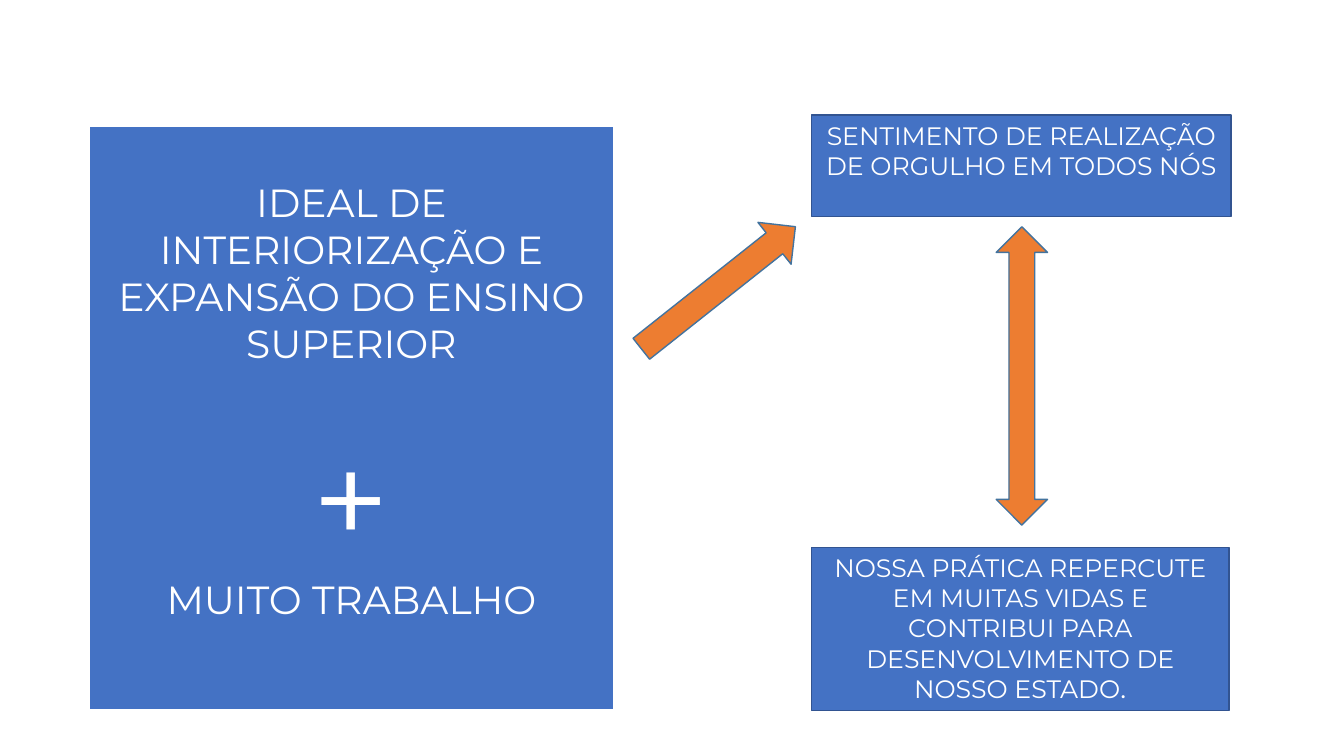
from pptx import Presentation
from pptx.dml.color import RGBColor
from pptx.enum import shapes, text
from pptx.util import Inches, Pt

BLUE = RGBColor(0x44, 0x72, 0xC4)
NAVY = RGBColor(0x32, 0x54, 0x91)
ORANGE = RGBColor(0xED, 0x7D, 0x31)
STEEL = RGBColor(0x43, 0x73, 0x9E)
WHITE = RGBColor(0xFF, 0xFF, 0xFF)
KIND = shapes.MSO_SHAPE


def shape(slide, kind, box, fill, line, width=1):
    item = slide.shapes.add_shape(kind, *[Inches(n) for n in box])
    item.shadow.inherit = False
    item.fill.solid()
    item.fill.fore_color.rgb = fill
    item.line.color.rgb = line
    item.line.width = Pt(width)
    return item


def panel(slide, box, lines, line=NAVY, width=1, top=0.05):
    """Blue box with centred lines, each given as (words, size, space before)."""
    item = shape(slide, KIND.RECTANGLE, box, BLUE, line, width)
    frame = item.text_frame
    frame.word_wrap = True
    frame.vertical_anchor = text.MSO_ANCHOR.TOP
    frame.margin_top = Inches(top)
    for i, (words, size, gap) in enumerate(lines):
        para = frame.add_paragraph() if i else frame.paragraphs[0]
        para.add_run().text = words
        para.alignment = text.PP_ALIGN.CENTER
        para.space_before = Pt(gap)
        para.font.name = "Montserrat"
        para.font.size = Pt(size)
        para.font.color.rgb = WHITE
    return item


def causes(slide, box):
    panel(slide, box, [
        ("IDEAL DE INTERIORIZAÇÃO E EXPANSÃO DO ENSINO SUPERIOR", 28, 0),
        ("+", 96, 34),
        ("MUITO TRABALHO", 28, 0),
    ], WHITE, 1.5, top=0.52)


def effects(slide, box):
    left, top, wide, high = box
    panel(slide, (left, top, wide, 1.01),
          [("SENTIMENTO DE REALIZAÇÃO DE ORGULHO EM TODOS NÓS", 18, 0)])
    low = panel(slide, (left, top + high - 1.62, wide - 0.02, 1.62),
                [("NOSSA PRÁTICA REPERCUTE EM MUITAS VIDAS E CONTRIBUI PARA "
                  "DESENVOLVIMENTO DE NOSSO ESTADO", 18, 0)])
    stop = low.text_frame.paragraphs[0].add_run()
    stop.text = "."
    stop.font.name = "Calibri"
    # Two-way arrow between the boxes
    shape(slide, KIND.UP_DOWN_ARROW,
          (left + wide / 2 - 0.25, top + 1.11, 0.51, 2.96), ORANGE, STEEL)


def main():
    deck = Presentation()
    deck.slide_width, deck.slide_height = Inches(13.33), Inches(7.5)
    slide = deck.slides.add_slide(deck.slide_layouts[6])
    causes(slide, (0.88, 1.25, 5.21, 5.79))
    effects(slide, (8.05, 1.14, 4.16, 5.91))
    # Arrow from causes to effects
    arrow = shape(slide, KIND.RIGHT_ARROW, (6.15, 2.59, 1.95, 0.53), ORANGE, STEEL)
    arrow.rotation = 321.6
    deck.save("out.pptx")


if __name__ == "__main__":
    main()
